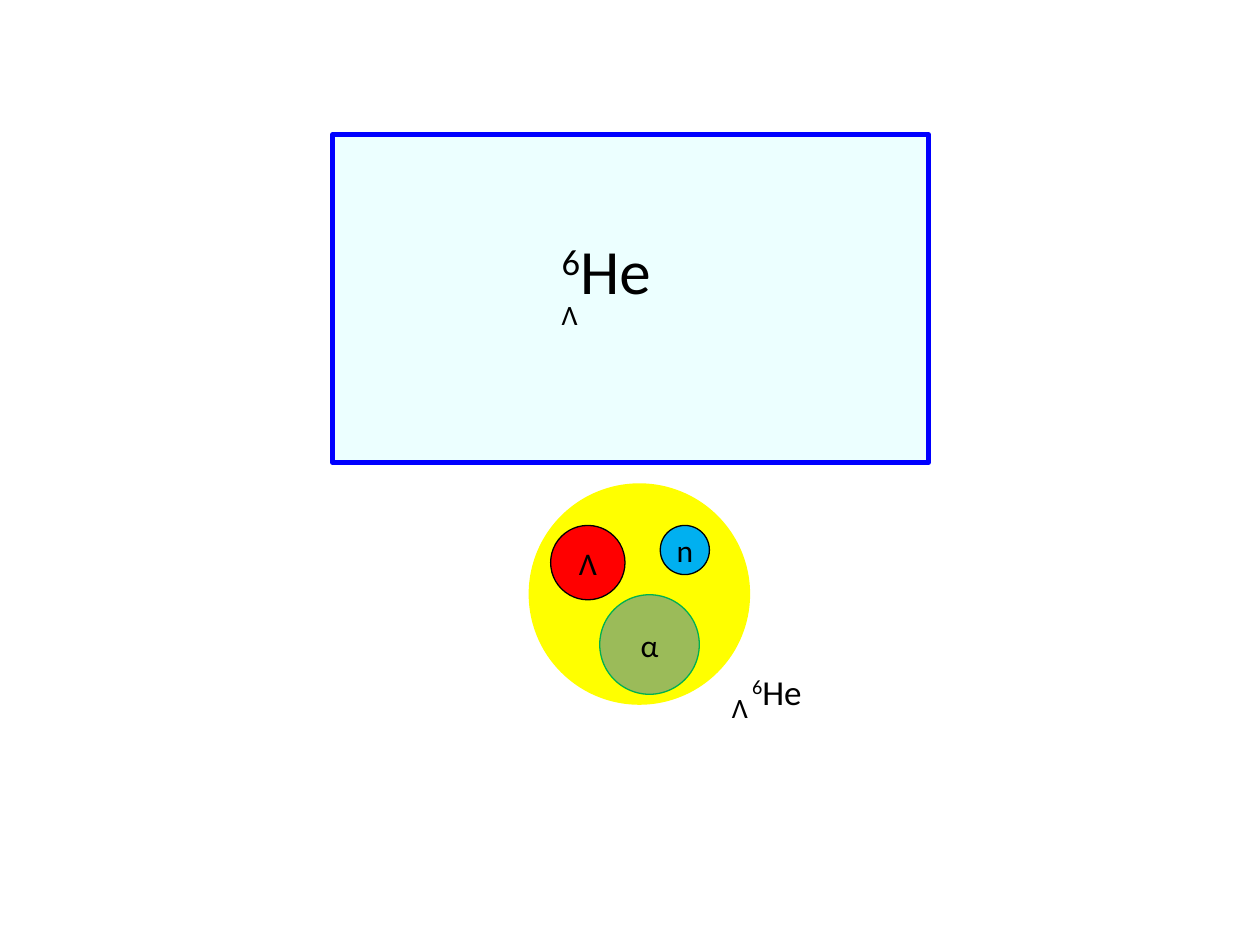
from pptx import Presentation
from pptx.dml.color import RGBColor
from pptx.enum.shapes import MSO_SHAPE
from pptx.enum.text import MSO_ANCHOR, MSO_AUTO_SIZE, PP_ALIGN
from pptx.oxml.ns import qn
from pptx.util import Inches, Pt
from lxml.etree import SubElement


def color(value):
    return RGBColor.from_string(value)


class NucleusSlide:
    """Draws the parts of a hypernucleus diagram on one slide."""

    font_name = "Calibri"
    text_color = "000000"

    def __init__(self, slide):
        self.slide = slide

    def add_text(self, shape, text, size, superscript="", wrap=False):
        frame = shape.text_frame
        frame.word_wrap = wrap
        paragraph = frame.paragraphs[0]
        paragraph.font.name = self.font_name
        paragraph.font.size = Pt(size)
        paragraph.font.color.rgb = color(self.text_color)
        if superscript:
            run = paragraph.add_run()
            run.text = superscript
            run.font._element.set("baseline", "30000")
        paragraph.add_run().text = text
        return paragraph

    def outline(self, kind, left, top, width, height, fill, line, weight, opacity=100):
        shape = self.slide.shapes.add_shape(
            kind, Inches(left), Inches(top), Inches(width), Inches(height)
        )
        shape.shadow.inherit = False
        shape.fill.solid()
        shape.fill.fore_color.rgb = color(fill)
        if opacity < 100:
            fill_color = shape._element.spPr.find(qn("a:solidFill"))[0]
            SubElement(fill_color, qn("a:alpha")).set("val", str(opacity * 1000))
        shape.line.color.rgb = color(line)
        shape.line.width = Pt(weight)
        return shape

    def circle(self, left, top, diameter, fill, line, weight=0.75, text=""):
        shape = self.outline(
            MSO_SHAPE.OVAL, left, top, diameter, diameter, fill, line, weight
        )
        if text:
            paragraph = self.add_text(shape, text, 18)
            paragraph.alignment = PP_ALIGN.CENTER
            shape.text_frame.vertical_anchor = MSO_ANCHOR.MIDDLE

    def panel(self, left, top, width, height, fill, line, weight, opacity):
        self.outline(
            MSO_SHAPE.RECTANGLE, left, top, width, height, fill, line, weight, opacity
        )

    def label(self, left, top, width, height, text, size, superscript="", wrap=False):
        box = self.slide.shapes.add_textbox(
            Inches(left), Inches(top), Inches(width), Inches(height)
        )
        self.add_text(box, text, size, superscript, wrap)
        box.text_frame.auto_size = MSO_AUTO_SIZE.SHAPE_TO_FIT_TEXT


def main():
    presentation = Presentation()
    presentation.slide_width = Inches(10)
    presentation.slide_height = Inches(7.5)
    blank_layout = presentation.slide_layouts[6]
    nucleus = NucleusSlide(presentation.slides.add_slide(blank_layout))

    nucleus.circle(4.21, 3.85, 1.73, "FFFF00", "FFFF00", 2)
    nucleus.circle(4.76, 4.72, 0.79, "9BBB59", "00B050", text="α")
    nucleus.circle(4.37, 4.17, 0.59, "FF0000", "000000", text="Λ")
    nucleus.label(5.87, 5.27, 0.61, 0.44, "He", 20, superscript="6")
    nucleus.label(5.71, 5.43, 0.42, 0.37, "Λ", 16)
    nucleus.circle(5.24, 4.17, 0.39, "00B0F0", "000000", text="n")

    nucleus.panel(2.64, 1.07, 4.73, 2.6, "CCFFFF", "0000FF", 3, opacity=37)
    nucleus.label(4.36, 1.79, 1.5, 0.7, "He", 36, superscript="6", wrap=True)
    nucleus.label(4.36, 2.31, 0.39, 0.37, "Λ", 16, wrap=True)

    presentation.save("out.pptx")


if __name__ == "__main__":
    main()
